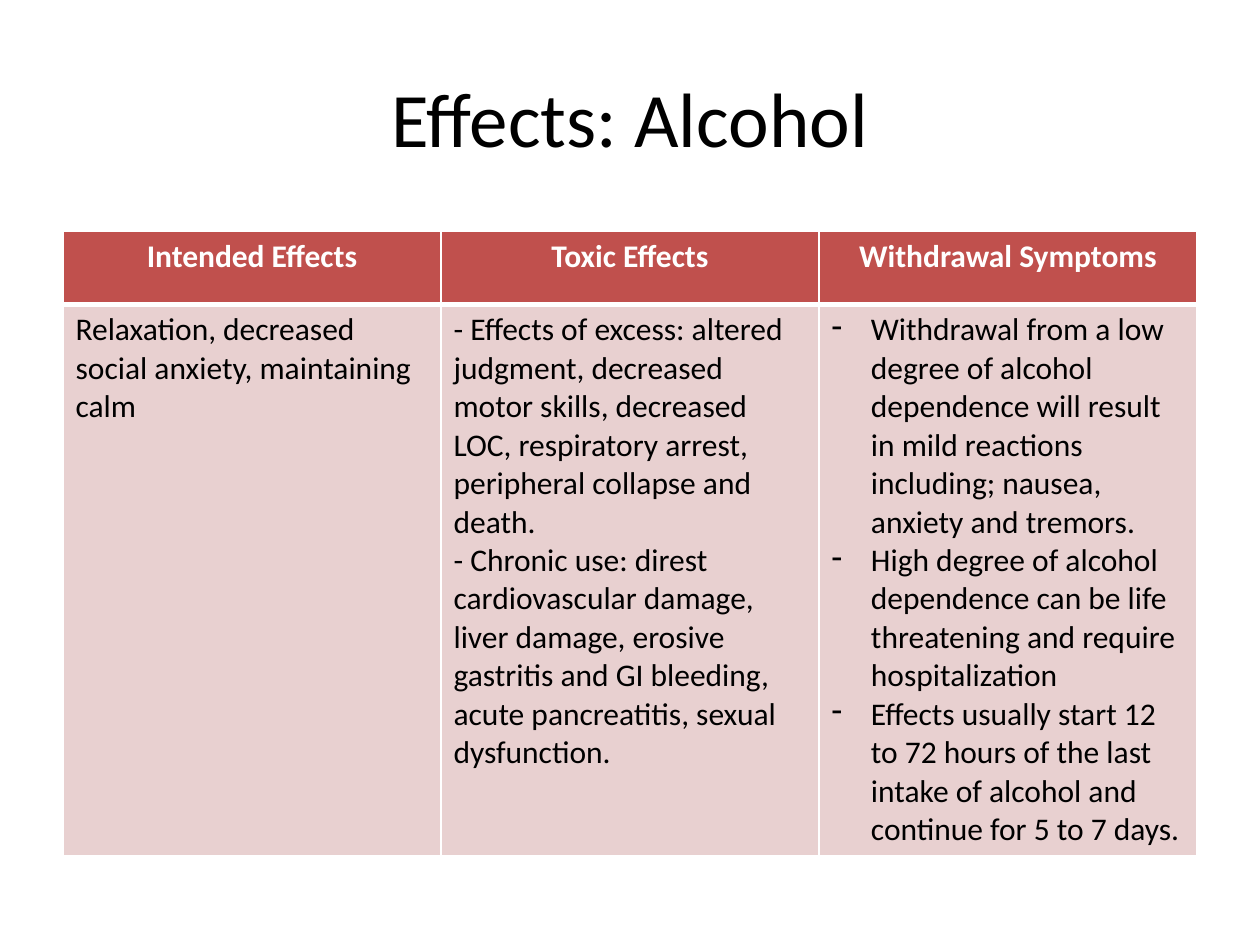
from lxml import etree
from pptx import Presentation
from pptx.dml.color import RGBColor
from pptx.enum import text
from pptx.oxml import ns
from pptx.util import Pt

BLACK = RGBColor(0x00, 0x00, 0x00)
WHITE = RGBColor(0xFF, 0xFF, 0xFF)
RED = RGBColor(0xC0, 0x50, 0x4D)
PINK = RGBColor(0xE8, 0xD0, 0xD0)

HEADERS = ["Intended Effects", "Toxic Effects", "Withdrawal Symptoms"]
INTENDED = ["Relaxation, decreased social anxiety, maintaining calm"]
TOXIC = [
    "- Effects of excess: altered judgment, decreased motor skills, decreased LOC, "
    "respiratory arrest, peripheral collapse and death.",
    "- Chronic use: direst cardiovascular damage, liver damage, erosive gastritis "
    "and GI bleeding, acute pancreatitis, sexual dysfunction.",
]
WITHDRAWAL = [
    "Withdrawal from a low degree of alcohol dependence will result in mild "
    "reactions including; nausea, anxiety and tremors.",
    "High degree of alcohol dependence can be life threatening and require hospitalization",
    "Effects usually start 12 to 72 hours of the last intake of alcohol and "
    "continue for 5 to 7 days.",
]


class SlideBuilder:
    """Holds the text style and the current slide."""

    font = "Calibri"

    def __init__(self, slide):
        self.slide = slide

    def run(self, paragraph, words, size, color, bold=False):
        run = paragraph.add_run()
        run.text = words
        run.font.name = self.font
        run.font.size = Pt(size)
        run.font.bold = bold
        run.font.color.rgb = color

    def title(self, words):
        shape = self.slide.shapes.title
        shape.left, shape.top, shape.width, shape.height = Pt(36), Pt(21.6), Pt(648), Pt(90)
        shape.text_frame.vertical_anchor = text.MSO_ANCHOR.MIDDLE
        paragraph = shape.text_frame.paragraphs[0]
        paragraph.alignment = text.PP_ALIGN.CENTER
        self.run(paragraph, words, 44, BLACK)

    def table(self, rows, columns, left, top, width, heights):
        shape = self.slide.shapes.add_table(
            rows, columns, Pt(left), Pt(top), Pt(width), Pt(sum(heights)))
        for row, height in zip(shape.table.rows, heights):
            row.height = Pt(height)
        shape.table.horz_banding = False
        return shape.table

    def borders(self, cell, top, bottom):
        properties = cell._tc.get_or_add_tcPr()
        for side, width in (("L", 1), ("R", 1), ("T", top), ("B", bottom)):
            line = etree.SubElement(properties, ns.qn(f"a:ln{side}"), w=str(Pt(width)))
            fill = etree.SubElement(line, ns.qn("a:solidFill"))
            etree.SubElement(fill, ns.qn("a:srgbClr"), val=str(WHITE))

    def bullet(self, paragraph):
        properties = paragraph._p.get_or_add_pPr()
        properties.set("marL", str(Pt(22.5)))
        properties.set("indent", str(-Pt(22.5)))
        etree.SubElement(properties, ns.qn("a:buChar"), char="-")

    def cell(self, cell, lines, header=False, bulleted=False):
        self.borders(cell, 1 if header else 3, 3 if header else 1)
        cell.fill.solid()
        cell.fill.fore_color.rgb = RED if header else PINK
        frame = cell.text_frame
        for index, words in enumerate(lines):
            paragraph = frame.add_paragraph() if index else frame.paragraphs[0]
            paragraph.alignment = text.PP_ALIGN.CENTER if header else text.PP_ALIGN.LEFT
            if bulleted:
                self.bullet(paragraph)
            self.run(paragraph, words, 18, WHITE if header else BLACK, header)


def main():
    presentation = Presentation()
    presentation.slide_width, presentation.slide_height = Pt(720), Pt(540)
    slide = presentation.slides.add_slide(presentation.slide_layouts[5])
    builder = SlideBuilder(slide)
    builder.title("Effects: Alcohol")
    table = builder.table(2, 3, 36, 132, 648, [42, 309.6])
    for column, (header, lines) in enumerate(zip(HEADERS, [INTENDED, TOXIC, WITHDRAWAL])):
        builder.cell(table.cell(0, column), [header], header=True)
        builder.cell(table.cell(1, column), lines, bulleted=lines is WITHDRAWAL)
    presentation.save("out.pptx")


if __name__ == "__main__":
    main()
